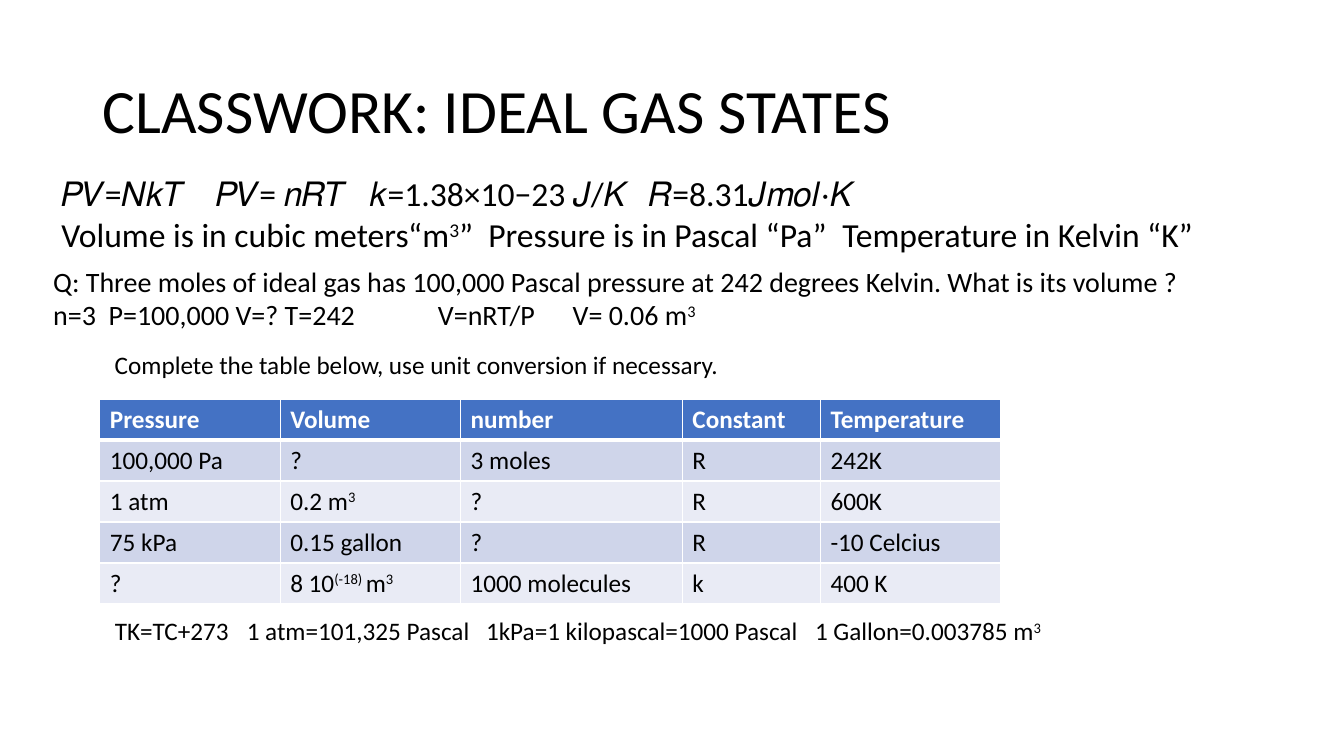
"""Build the ideal gas classwork slide on a grid of third-inch columns and rows."""
from dataclasses import dataclass

from lxml.etree import SubElement
from pptx import Presentation
from pptx.dml.color import RGBColor
from pptx.enum.text import MSO_ANCHOR as Anchor
from pptx.oxml.ns import qn
from pptx.slide import Slide
from pptx.table import _Cell as Cell
from pptx.text.text import _Paragraph as Para
from pptx.util import Emu, Inches, Pt

BLACK = RGBColor(0x00, 0x00, 0x00)
WHITE = RGBColor(0xFF, 0xFF, 0xFF)
HEADER = RGBColor(0x44, 0x72, 0xC4)
BANDS = (RGBColor(0xCF, 0xD5, 0xEA), RGBColor(0xE9, 0xEB, 0xF5))
FONT = "Calibri"
RAISE = "^"
COLUMNS, ROWS = 40, 22.5


@dataclass(frozen=True)
class Line:
    text: str
    stops: tuple[float, ...] = ()


@dataclass(frozen=True)
class Block:
    col: float
    row: float
    cols: float
    rows: float
    size: int
    lines: tuple[Line, ...]
    anchor: Anchor = Anchor.TOP
    spacing: float = 1.0


BLOCKS = (
    Block(2.76, 1.2, 34.5, 4.35, 44, (Line("CLASSWORK: IDEAL GAS STATES"),),
          Anchor.MIDDLE, 0.9),
    Block(1.53, 5.01, 35.58, 4.53, 24, (
        Line("𝑃𝑉=𝑁𝑘𝑇\t𝑃𝑉= 𝑛𝑅𝑇\t𝑘=1.38×10−23 𝐽/𝐾\t𝑅=8.31𝐽𝑚𝑜𝑙⋅𝐾", (4.6, 9.18, 17.48)),
        Line("Volume is in cubic meters“m^3^”\tPressure is in Pascal “Pa”\t"
             "Temperature in Kelvin “K”", (12.71, 23.25)),
    )),
    Block(1.29, 7.71, 36.69, 2.31, 20, (
        Line("Q: Three moles of ideal gas has 100,000 Pascal pressure at 242 degrees Kelvin. "
             "What is its volume ?"),
        Line("n=3\tP=100,000 V=? T=242\tV=nRT/P\tV= 0.06 m^3^", (1.65, 11.45, 15.46)),
    )),
    Block(3.12, 10.26, 25.08, 1.2, 18, (
        Line("Complete the table below, use unit conversion if necessary."),
    )),
    Block(3.12, 18.18, 29.94, 1.2, 18, (
        Line("TK=TC+273\t1 atm=101,325 Pascal\t1kPa=1 kilopascal=1000 Pascal\t"
             "1 Gallon=0.003785 m^3^", (3.93, 11.05, 20.84)),
    )),
)

TABLE_COL, TABLE_ROW, ROW_HEIGHT = 2.97, 11.88, 1.22
TABLE_COLS = (5.37, 5.37, 6.6, 4.11, 5.37)
GAS_STATES = (
    ("Pressure", "Volume", "number", "Constant", "Temperature"),
    ("100,000 Pa", "?", "3 moles", "R", "242K"),
    ("1 atm", "0.2 m^3^", "?", "R", "600K"),
    ("75 kPa", "0.15 gallon", "?", "R", "-10 Celcius"),
    ("?", "8 10^(-18) ^m^3^", "1000 molecules", "k", "400 K"),
)


def grid(units: float) -> Emu:
    return Emu(round(Inches(units) / 3))


def add_runs(p: Para, text: str, size: int, color: RGBColor, bold: bool = False) -> None:
    for i, part in enumerate(text.split(RAISE)):
        if not part:
            continue
        r = p.add_run()
        r.text = part
        r.font.name, r.font.size, r.font.bold = FONT, Pt(size), bold
        r.font.color.rgb = color
        if i % 2:
            r.font._element.set("baseline", "30000")


def add_stops(p: Para, stops: tuple[float, ...]) -> None:
    tabs = SubElement(p._p.get_or_add_pPr(), qn("a:tabLst"))
    for stop in stops:
        SubElement(tabs, qn("a:tab"), pos=str(grid(stop)), algn="l")


def add_block(s: Slide, block: Block) -> None:
    sp = s.shapes.add_textbox(*map(grid, (block.col, block.row, block.cols, block.rows)))
    tf = sp.text_frame
    tf.word_wrap = True
    tf.vertical_anchor = block.anchor
    for i, line in enumerate(block.lines):
        p = tf.add_paragraph() if i else tf.paragraphs[0]
        p.line_spacing = block.spacing
        if line.stops:
            add_stops(p, line.stops)
        add_runs(p, line.text, block.size, BLACK)


def add_borders(cell: Cell, top: int, bottom: int) -> None:
    tc_pr = cell._tc.get_or_add_tcPr()
    for side, width in (("L", 1), ("R", 1), ("T", top), ("B", bottom)):
        ln = SubElement(tc_pr, qn(f"a:ln{side}"), w=str(Pt(width)))
        fill = SubElement(ln, qn("a:solidFill"))
        SubElement(fill, qn("a:srgbClr"), val=str(WHITE))


def add_gas_table(s: Slide) -> None:
    n = len(GAS_STATES)
    frame = s.shapes.add_table(n, len(TABLE_COLS), grid(TABLE_COL), grid(TABLE_ROW),
                               grid(sum(TABLE_COLS)), grid(n * ROW_HEIGHT))
    table = frame.table
    for column, width in zip(table.columns, TABLE_COLS):
        column.width = grid(width)
    for i, (row, texts) in enumerate(zip(table.rows, GAS_STATES)):
        row.height = grid(ROW_HEIGHT)
        header = i == 0
        for cell, text in zip(row.cells, texts):
            add_borders(cell, 3 if i == 1 else 1, 3 if header else 1)
            cell.fill.solid()
            cell.fill.fore_color.rgb = HEADER if header else BANDS[(i - 1) % 2]
            add_runs(cell.text_frame.paragraphs[0], text, 18,
                     WHITE if header else BLACK, header)


def main() -> None:
    prs = Presentation()
    prs.slide_width, prs.slide_height = grid(COLUMNS), grid(ROWS)
    s = prs.slides.add_slide(prs.slide_layouts[6])
    for block in BLOCKS:
        add_block(s, block)
    add_gas_table(s)
    prs.save("out.pptx")


if __name__ == "__main__":
    main()
